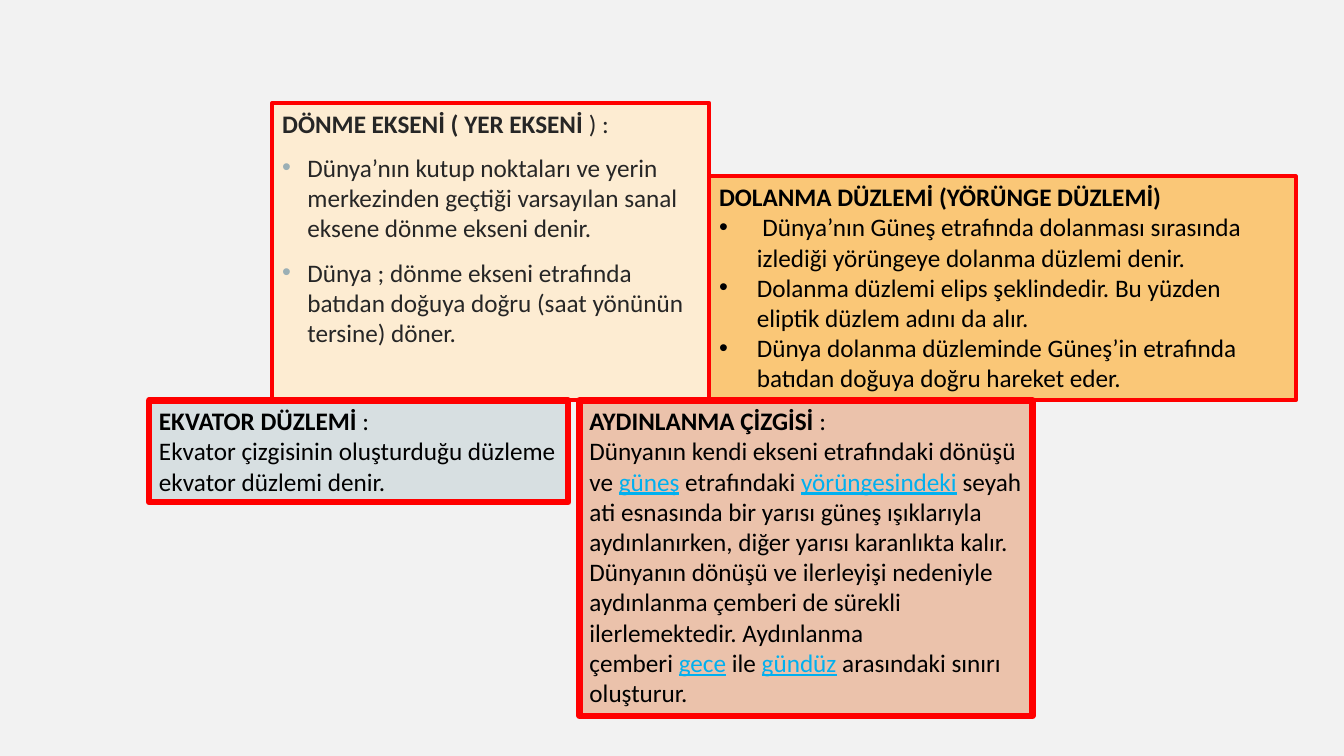
"""Builds a slide of four boxed definitions about the Earth's axis and planes."""
from lxml.etree import SubElement
from pptx import Presentation
from pptx.dml.color import RGBColor
from pptx.enum.text import MSO_ANCHOR, MSO_AUTO_SIZE
from pptx.oxml.ns import qn
from pptx.util import Pt

COLORS = {
    "page": "F2F2F2", "border": "FF0000", "axis": "FDECD2", "orbit": "FAC777",
    "equator": "D7DFE1", "light": "EBC2AB", "text": "000000",
    "axis_text": "262626", "axis_bullet": "9BAFB5", "link": "00B0F0",
}
NBSP = chr(160)


def color(name):
    """Return the named colour."""
    return RGBColor.from_string(COLORS[name])


def add_box(page, left, top, width, height, fill, border):
    """Add a filled text box with a red border and return its text frame."""
    box = page.shapes.add_textbox(Pt(left), Pt(top), Pt(width), Pt(height))
    box.fill.solid()
    box.fill.fore_color.rgb = color(fill)
    box.line.color.rgb = color("border")
    box.line.width = Pt(border)
    frame = box.text_frame
    frame.word_wrap = True
    frame.auto_size = MSO_AUTO_SIZE.NONE
    frame.vertical_anchor = MSO_ANCHOR.TOP
    return frame


def set_bullet(para, indent, bullet):
    """Give a paragraph a hanging round bullet in the named colour."""
    properties = para._p.get_or_add_pPr()
    properties.set("marL", str(Pt(indent)))
    properties.set("indent", str(-Pt(indent)))
    bullet_color = SubElement(properties, qn("a:buClr"))
    SubElement(bullet_color, qn("a:srgbClr"), val=COLORS[bullet])
    SubElement(properties, qn("a:buFont"), typeface="Arial")
    SubElement(properties, qn("a:buChar"), char="•")


def write_para(para, spans, text_color="text", indent=0, bullet="text", before=0):
    """Write (text, style) spans into a paragraph; styles are bold, link or plain."""
    if indent:
        set_bullet(para, indent, bullet)
    para.space_before = Pt(before)
    para.font.name = "Calibri"
    para.font.size = Pt(18)
    para.font.color.rgb = color(text_color)
    for text, style in spans:
        span = para.add_run()
        span.text = text
        if style == "bold":
            span.font.bold = True
        elif style == "link":
            span.font.underline = True
            span.font.color.rgb = color("link")


def fill_box(frame, heading, body, text_color="text", **layout):
    """Write a heading and the body paragraphs below it."""
    write_para(frame.paragraphs[0], heading, text_color)
    for spans in body:
        write_para(frame.add_paragraph(), spans, text_color, **layout)


def main():
    """Build the slide and save the deck."""
    deck = Presentation()
    deck.slide_width, deck.slide_height = Pt(960), Pt(540)
    page = deck.slides.add_slide(deck.slide_layouts[6])
    page.background.fill.solid()
    page.background.fill.fore_color.rgb = color("page")

    axis = add_box(page, 194.5, 73.5, 312, 212.5, "axis", 3)
    fill_box(axis, [("DÖNME EKSENİ ( YER EKSENİ ", "bold"), (") :", "plain")], [
        [("Dünya’nın kutup noktaları ve yerin merkezinden geçtiği varsayılan "
          "sanal eksene dönme ekseni denir.", "plain")],
        [("Dünya ; dönme ekseni etrafında batıdan doğuya doğru (saat yönünün "
          "tersine) döner.", "plain")],
    ], "axis_text", indent=18, bullet="axis_bullet", before=10)

    orbit = add_box(page, 506.5, 126, 419, 160, "orbit", 3)
    fill_box(orbit, [("DOLANMA DÜZLEMİ (YÖRÜNGE DÜZLEMİ)", "bold")], [
        [(" Dünya’nın Güneş etrafında dolanması sırasında izlediği yörüngeye "
          "dolanma düzlemi denir.", "plain")],
        [("Dolanma düzlemi elips şeklindedir. Bu yüzden eliptik düzlem adını "
          "da alır.", "plain")],
        [("Dünya dolanma düzleminde Güneş’in etrafında batıdan doğuya doğru "
          "hareket eder.", "plain")],
    ], indent=27)

    equator = add_box(page, 106.5, 286, 299.5, 72.7, "equator", 4.5)
    fill_box(equator, [("EKVATOR DÜZLEMİ ", "bold"), (":", "plain")], [
        [("Ekvator çizgisinin oluşturduğu düzleme ekvator düzlemi denir.", "plain")],
    ])

    light = add_box(page, 414, 286, 323.5, 225.5, "light", 4.5)
    fill_box(light, [("AYDINLANMA ÇİZGİSİ ", "bold"), (":", "plain")], [[
        (f"Dünyanın kendi ekseni etrafındaki dönüşü ve{NBSP}", "plain"),
        ("güneş", "link"),
        (f"{NBSP}etrafındaki{NBSP}", "plain"),
        ("yörüngesindeki", "link"),
        (f"{NBSP}seyahati esnasında bir yarısı güneş ışıklarıyla aydınlanırken, "
         "diğer yarısı karanlıkta kalır. Dünyanın dönüşü ve ilerleyişi nedeniyle "
         "aydınlanma çemberi de sürekli ilerlemektedir. Aydınlanma "
         f"çemberi{NBSP}", "plain"),
        ("gece", "link"),
        (f"{NBSP}ile{NBSP}", "plain"),
        ("gündüz", "link"),
        (f"{NBSP}arasındaki sınırı oluşturur.", "plain"),
    ]])
    deck.save("out.pptx")


if __name__ == "__main__":
    main()
